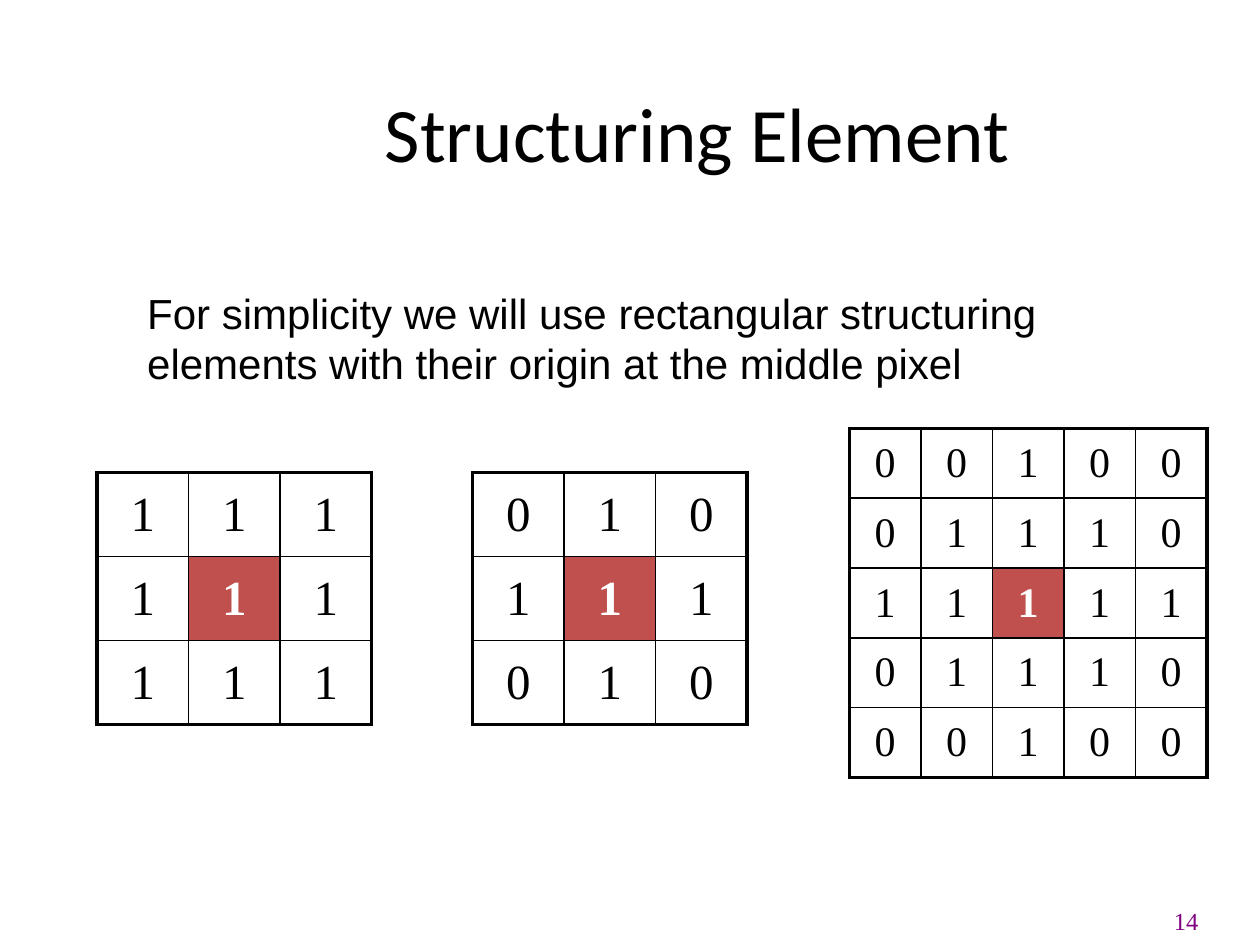
from dataclasses import dataclass

from lxml import etree
from pptx import Presentation
from pptx import util as u
from pptx.dml import color
from pptx.enum import text
from pptx.oxml import ns


@dataclass(frozen=True)
class Theme:
    ink: str = "000000"
    light: str = "FFFFFF"
    origin: str = "C0504D"
    number: str = "800080"
    head: str = "Calibri"
    body: str = "Arial"
    serif: str = "Times New Roman"
    title: int = 44
    large: int = 28
    medium: int = 24
    small: int = 14
    outer: float = 2.25
    inner: float = 1


THEME = Theme()
ALIGN = text.PP_ALIGN
ANCHOR = text.MSO_ANCHOR


def style(par, face, size, tint, align, bold=False):
    par.alignment = align
    font = par.font
    font.name, font.size, font.bold = face, u.Pt(size), bold
    font.color.rgb = color.RGBColor.from_string(tint)


def add_label(slide, box, words, face, size, tint, align, anchor):
    frame = slide.shapes.add_textbox(*map(u.Inches, box)).text_frame
    frame.word_wrap = True
    frame.vertical_anchor = anchor
    frame.text = words
    style(frame.paragraphs[0], face, size, tint, align)


def add_border(cell, side, width):
    props = cell._tc.get_or_add_tcPr()
    line = etree.SubElement(props, ns.qn(f"a:ln{side}"), w=str(u.Pt(width)))
    fill = etree.SubElement(line, ns.qn("a:solidFill"))
    etree.SubElement(fill, ns.qn("a:srgbClr"), val=THEME.ink)


def add_kernel(slide, box, rows, size):
    count = len(rows)
    left, top, width, height = map(u.Inches, box)
    table = slide.shapes.add_table(count, count, left, top, width, height).table
    table.first_row = table.horz_banding = False
    last, mid = count - 1, count // 2
    for r, row in enumerate(rows):
        for c, value in enumerate(row):
            cell = table.cell(r, c)
            edges = {"L": c == 0, "R": c == last, "T": r == 0, "B": r == last}
            for side, edge in edges.items():
                add_border(cell, side, THEME.outer if edge else THEME.inner)
            center = r == c == mid
            if center:
                cell.fill.solid()
                cell.fill.fore_color.rgb = color.RGBColor.from_string(THEME.origin)
            else:
                cell.fill.background()
            cell.vertical_anchor = ANCHOR.MIDDLE
            cell.text = value
            tint = THEME.light if center else THEME.ink
            style(cell.text_frame.paragraphs[0], THEME.serif, size, tint,
                  ALIGN.CENTER, center)


def main():
    deck = Presentation()
    deck.slide_width, deck.slide_height = u.Inches(10), u.Inches(7.5)
    slide = deck.slides.add_slide(deck.slide_layouts[6])
    add_label(slide, (7.21, 6.97, 2.4, 0.5), "14", THEME.serif, THEME.small,
              THEME.number, ALIGN.RIGHT, ANCHOR.BOTTOM)
    add_label(slide, (1.5, 0.42, 8.07, 1.25), "Structuring Element", THEME.head,
              THEME.title, THEME.ink, ALIGN.CENTER, ANCHOR.MIDDLE)
    add_label(slide, (1.07, 2.23, 8.09, 0.9),
              "For simplicity we will use rectangular structuring elements "
              "with their origin at the middle pixel",
              THEME.body, THEME.medium, THEME.ink, ALIGN.LEFT, ANCHOR.TOP)
    add_kernel(slide, (0.77, 3.75, 2.18, 2), ("111", "111", "111"), THEME.large)
    add_kernel(slide, (6.74, 3.4, 2.84, 2.77),
               ("00100", "01110", "11111", "01110", "00100"), THEME.medium)
    add_kernel(slide, (3.75, 3.75, 2.18, 2), ("010", "111", "010"), THEME.large)
    deck.save("out.pptx")


if __name__ == "__main__":
    main()
